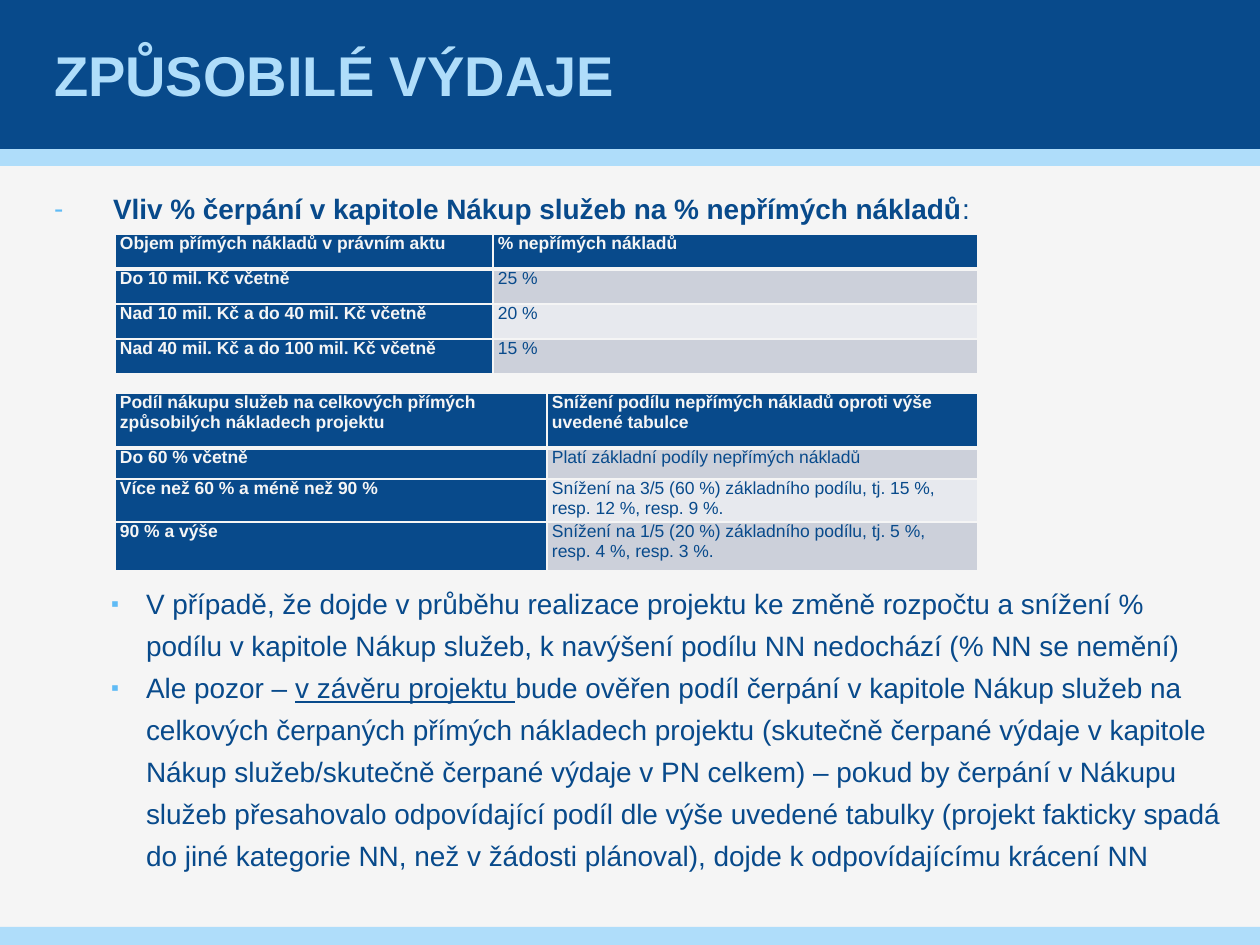
from dataclasses import dataclass

from lxml.etree import SubElement
from pptx import Presentation
from pptx.dml.color import RGBColor
from pptx.enum.shapes import MSO_SHAPE
from pptx.enum.text import MSO_ANCHOR, MSO_AUTO_SIZE, PP_ALIGN
from pptx.oxml import parse_xml
from pptx.oxml.ns import nsdecls, qn
from pptx.util import Pt

EMU_PER_PX = 914400 / 126
FONT = "Arial"
COLORS = {
    "navy": "084A8B",
    "sky": "AFDDFA",
    "bullet": "5FBBF5",
    "paper": "F5F5F5",
    "dark_row": "CCD0DA",
    "light_row": "E7E9EE",
}


@dataclass
class Band:
    top: int
    height: int
    color: str


@dataclass
class Span:
    text: str
    bold: bool = False
    underline: bool = False


@dataclass
class Item:
    spans: list[Span]
    level: int
    bullet: str
    bullet_percent: int
    margin: int
    hanging: int
    line_points: float
    before_points: float = 0


@dataclass
class Grid:
    top: int
    columns: list[int]
    rows: list[int]
    texts: list[tuple[str, str]]


BANDS = [Band(149, 17, "sky"), Band(0, 149, "navy"), Band(927, 18, "sky")]

HEADING_LINE = 28.8
TABLE_SPACE = 7 * HEADING_LINE  # room for both tables below the heading

ITEMS = [
    Item([Span("Vliv % čerpání v kapitole Nákup služeb na % nepřímých nákladů", bold=True),
          Span(":")], 0, "-", 100, 59, 59, HEADING_LINE),
    Item([Span("V případě, že dojde v průběhu realizace projektu ke změně rozpočtu a snížení % "
               "podílu v kapitole Nákup služeb, k navýšení podílu NN nedochází (% NN se nemění)")],
         1, "▪", 80, 92, 35, 24, TABLE_SPACE),
    Item([Span("Ale pozor – "),
          Span("v závěru projektu ", underline=True),
          Span("bude ověřen podíl čerpání v kapitole Nákup služeb na celkových čerpaných přímých "
               "nákladech projektu (skutečně čerpané výdaje v kapitole Nákup služeb/skutečně "
               "čerpané výdaje v PN celkem) – pokud by čerpání v Nákupu služeb přesahovalo "
               "odpovídající podíl dle výše uvedené tabulky (projekt fakticky spadá do jiné "
               "kategorie NN, než v žádosti plánoval), dojde k odpovídajícímu krácení NN")],
         1, "▪", 80, 92, 35, 24),
]

GRIDS = [
    Grid(234, [378, 485], [35] * 4, [
        ("Objem přímých nákladů v právním aktu", "% nepřímých nákladů"),
        ("Do 10 mil. Kč včetně", "25 %"),
        ("Nad 10 mil. Kč a do 40 mil. Kč včetně", "20 %"),
        ("Nad 40 mil. Kč a do 100 mil. Kč včetně", "15 %"),
    ]),
    Grid(393, [432, 431], [55, 31, 43, 49], [
        ("Podíl nákupu služeb na celkových přímých způsobilých nákladech projektu",
         "Snížení podílu nepřímých nákladů oproti výše uvedené tabulce"),
        ("Do 60 % včetně", "Platí základní podíly nepřímých nákladů"),
        ("Více než 60 % a méně než 90 %",
         "Snížení na 3/5 (60 %) základního podílu, tj. 15 %, \nresp. 12 %, resp. 9 %."),
        ("90 % a výše",
         "Snížení na 1/5 (20 %) základního podílu, tj. 5 %, \nresp. 4 %, resp. 3 %."),
    ]),
]


def px(length: int) -> int:
    return round(length * EMU_PER_PX)


def rgb(name: str) -> RGBColor:
    return RGBColor.from_string(COLORS[name])


def add_run(paragraph, span: Span, size: int, color: str) -> None:
    run = paragraph.add_run()
    run.text = span.text
    run.font.name = FONT
    run.font.size = Pt(size)
    run.font.bold = span.bold
    run.font.underline = span.underline
    run.font.color.rgb = rgb(color)


def place(shape, left: int, top: int, width: int, height: int) -> None:
    shape.left, shape.top = px(left), px(top)
    shape.width, shape.height = px(width), px(height)


def set_insets(target, side: int) -> None:
    target.margin_left = target.margin_right = px(side)
    target.margin_top = target.margin_bottom = 0


def add_band(slide, band: Band, width: int) -> None:
    """Draw a full-width band behind the title."""
    shape = slide.shapes.add_shape(MSO_SHAPE.RECTANGLE, 0, px(band.top), width, px(band.height))
    shape.shadow.inherit = False
    shape.fill.solid()
    shape.fill.fore_color.rgb = rgb(band.color)
    shape.line.fill.background()
    slide.shapes.title.element.addprevious(shape.element)


def fill_title(title) -> None:
    place(title, 49, 0, 1160, 149)
    frame = title.text_frame
    frame.auto_size = MSO_AUTO_SIZE.NONE
    frame.vertical_anchor = MSO_ANCHOR.MIDDLE
    set_insets(frame, 5)
    paragraph = frame.paragraphs[0]
    paragraph.alignment = PP_ALIGN.LEFT
    add_run(paragraph, Span("ZPŮSOBILÉ VÝDAJE", bold=True), 32, "sky")


def fill_item(paragraph, item: Item) -> None:
    paragraph.level = item.level
    paragraph.line_spacing = Pt(item.line_points)
    paragraph.space_before = Pt(item.before_points)
    paragraph.space_after = Pt(0)
    properties = paragraph._p.get_or_add_pPr()
    properties.set("marL", str(px(item.margin)))
    properties.set("indent", str(-px(item.hanging)))
    color = SubElement(properties, qn("a:buClr"))
    SubElement(color, qn("a:srgbClr"), val=COLORS["bullet"])
    SubElement(properties, qn("a:buSzPct"), val=str(item.bullet_percent * 1000))
    SubElement(properties, qn("a:buFont"), typeface=FONT)
    SubElement(properties, qn("a:buChar"), char=item.bullet)
    for span in item.spans:
        add_run(paragraph, span, 16, "navy")


def fill_body(body) -> None:
    place(body, 54, 175, 1171, 725)
    frame = body.text_frame
    frame.auto_size = MSO_AUTO_SIZE.NONE
    frame.vertical_anchor = MSO_ANCHOR.TOP
    set_insets(frame, 0)
    for index, item in enumerate(ITEMS):
        fill_item(frame.add_paragraph() if index else frame.paragraphs[0], item)


def set_borders(cell, row: int) -> None:
    """Draw thin borders, with a thick one between the header and the rows."""
    widths = {"lnL": 1, "lnR": 1, "lnT": 3 if row == 1 else 1, "lnB": 3 if row == 0 else 1}
    properties = cell._tc.get_or_add_tcPr()
    for index, (tag, points) in enumerate(widths.items()):
        properties.insert(index, parse_xml(
            f'<a:{tag} {nsdecls("a")} w="{Pt(points)}"><a:solidFill>'
            f'<a:srgbClr val="{COLORS["paper"]}"/></a:solidFill></a:{tag}>'))


def fill_cell(cell, text: str, row: int, column: int) -> None:
    is_label = row == 0 or column == 0
    set_insets(cell, 0)
    cell.fill.solid()
    cell.fill.fore_color.rgb = rgb("navy" if is_label else "dark_row" if row % 2 else "light_row")
    set_borders(cell, row)
    paragraph = cell.text_frame.paragraphs[0]
    paragraph.space_before = paragraph.space_after = Pt(3)
    paragraph._p.get_or_add_pPr().set("marL", str(px(5)))
    for index, line in enumerate(text.split("\n")):
        if index:
            paragraph.add_line_break()
        add_run(paragraph, Span(line, bold=is_label), 10, "paper" if is_label else "navy")


def add_grid(slide, grid: Grid) -> None:
    table = slide.shapes.add_table(
        len(grid.rows), len(grid.columns), px(115), px(grid.top),
        px(sum(grid.columns)), px(sum(grid.rows))).table
    for column, width in zip(table.columns, grid.columns):
        column.width = px(width)
    for row, height in zip(table.rows, grid.rows):
        row.height = px(height)
    for row, texts in enumerate(grid.texts):
        for column, text in enumerate(texts):
            fill_cell(table.cell(row, column), text, row, column)


def main() -> None:
    presentation = Presentation()
    presentation.slide_width, presentation.slide_height = px(1260), px(945)
    slide = presentation.slides.add_slide(presentation.slide_layouts[1])
    slide.background.fill.solid()
    slide.background.fill.fore_color.rgb = rgb("paper")
    for band in BANDS:
        add_band(slide, band, presentation.slide_width)
    fill_title(slide.shapes.title)
    fill_body(slide.placeholders[1])
    for grid in GRIDS:
        add_grid(slide, grid)
    presentation.save("out.pptx")


if __name__ == "__main__":
    main()
